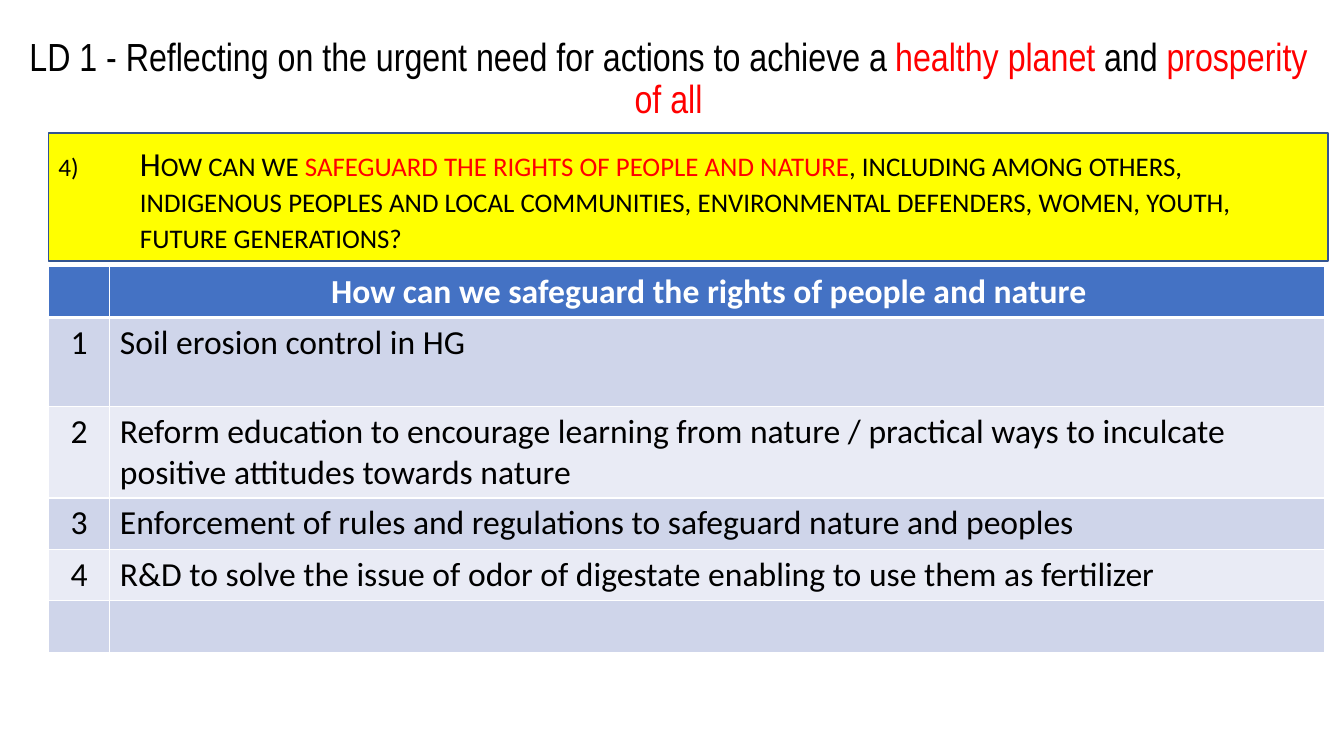
from pptx import Presentation
from pptx import util as u
from pptx.dml.color import RGBColor
from pptx.enum import shapes, text
from pptx.oxml import parse_xml
from pptx.oxml.ns import nsdecls

BLACK, RED, WHITE, YELLOW = "000000", "FF0000", "FFFFFF", "FFFF00"
HEADER, BAND_DARK, BAND_LIGHT = "4472C4", "CFD5EA", "E9EBF5"
OUTLINE = "325491"
LEFT = 0.48


def color(value):
    return RGBColor.from_string(value)


def apply(target, formats):
    for name, value in formats.items():
        setattr(target, name, value)


def element(tag, attributes, content=""):
    return parse_xml(f'<a:{tag} {nsdecls("a")} {attributes}>{content}</a:{tag}>')


class SlideBuilder:
    body_font = "Calibri"
    title_font = "Arial Narrow"

    def __init__(self, slide):
        self.slide = slide

    def place(self, box):
        return [u.Inches(length) for length in box]

    def add_runs(self, paragraph, runs, small_caps=False, **formats):
        for words, run_color in runs:
            run = paragraph.add_run()
            run.text = words
            apply(run.font, formats)
            run.font.color.rgb = color(run_color)
            if small_caps:
                run.font._element.set("cap", "small")

    def rectangle(self, box, fill, line):
        shape = self.slide.shapes.add_shape(shapes.MSO_SHAPE.RECTANGLE, *self.place(box))
        shape.shadow.inherit = False
        shape.fill.solid()
        shape.fill.fore_color.rgb = color(fill)
        shape.line.color.rgb = color(line)
        shape.line.width = u.Pt(1)

    def text_box(self, box, anchor, paragraph_formats):
        frame = self.slide.shapes.add_textbox(*self.place(box)).text_frame
        apply(frame, {"word_wrap": True, "vertical_anchor": anchor})
        paragraph = frame.paragraphs[0]
        apply(paragraph, {"line_spacing": 0.9, **paragraph_formats})
        return paragraph

    def title(self, box, runs):
        paragraph = self.text_box(box, text.MSO_ANCHOR.MIDDLE,
                                  {"alignment": text.PP_ALIGN.CENTER})
        self.add_runs(paragraph, runs, name=self.title_font, size=u.Pt(28))

    def numbered_question(self, box, number, indent, runs):
        paragraph = self.text_box(box, text.MSO_ANCHOR.TOP, {"space_before": u.Pt(10)})
        properties = paragraph._p.get_or_add_pPr()
        properties.set("marL", str(u.Inches(indent)))
        properties.set("indent", str(-u.Inches(indent)))
        for tag, attributes in (("buSzPct", 'val="75000"'),
                                ("buFont", f'typeface="{self.body_font}"'),
                                ("buAutoNum", f'type="arabicParenR" startAt="{number}"')):
            properties.append(element(tag, attributes))
        self.add_runs(paragraph, runs, small_caps=True, name=self.body_font, size=u.Pt(24))

    def borders(self, cell, top, bottom):
        properties = cell._tc.get_or_add_tcPr()
        widths = {"L": 1, "R": 1, "T": top, "B": bottom}
        for index, (side, width) in enumerate(widths.items()):
            properties.insert(index, element(
                f"ln{side}", f'w="{u.Pt(width)}"',
                f'<a:solidFill><a:srgbClr val="{WHITE}"/></a:solidFill>'))

    def table(self, left, top, widths, heights, rows):
        box = self.place((left, top, sum(widths), sum(heights)))
        table = self.slide.shapes.add_table(len(rows), len(widths), *box).table
        for column, width in zip(table.columns, widths):
            column.width = u.Inches(width)
        for row_index, (row, height) in enumerate(zip(rows, heights)):
            table.rows[row_index].height = u.Inches(height)
            is_header = row_index == 0
            fill = HEADER if is_header else (BAND_LIGHT, BAND_DARK)[row_index % 2]
            for column_index, words in enumerate(row):
                cell = table.cell(row_index, column_index)
                cell.fill.solid()
                cell.fill.fore_color.rgb = color(fill)
                self.borders(cell, 3 if row_index == 1 else 1, 3 if is_header else 1)
                paragraph = cell.text_frame.paragraphs[0]
                if is_header or column_index == 0:
                    paragraph.alignment = text.PP_ALIGN.CENTER
                if words:
                    self.add_runs(paragraph, [(words, WHITE if is_header else BLACK)],
                                  name=self.body_font, size=u.Pt(24), bold=is_header)
        table.cell(0, 1).margin_right = u.Inches(0.27)


def main():
    presentation = Presentation()
    apply(presentation, {"slide_width": u.Inches(13.33), "slide_height": u.Inches(7.5)})
    builder = SlideBuilder(presentation.slides.add_slide(presentation.slide_layouts[6]))

    builder.rectangle((LEFT, 1.32, 12.69, 1.27), YELLOW, OUTLINE)
    builder.numbered_question((LEFT, 1.41, 12.49, 5.16), 4, 0.81, [
        ("How can we ", BLACK),
        ("safeguard the rights of people and nature", RED),
        (", including among others, indigenous peoples and local communities, "
         "environmental defenders, women, youth, future generations?", BLACK),
    ])
    builder.title((0.14, 0.33, 12.98, 0.93), [
        ("LD 1 - Reflecting on the urgent need for actions to achieve a ", BLACK),
        ("healthy planet", RED),
        (" and ", BLACK),
        ("prosperity of all", RED),
    ])
    builder.table(LEFT, 2.64, (0.61, 12.05), (0.51, 0.88, 0.91, 0.51, 0.51, 0.51), [
        ("", "How can we safeguard the rights of people and nature"),
        ("1", "Soil erosion control in HG"),
        ("2", "Reform education to encourage learning from nature / practical ways "
              "to inculcate positive attitudes towards nature"),
        ("3", "Enforcement of rules and regulations to safeguard nature and peoples"),
        ("4", "R&D to solve the issue of odor of digestate enabling to use them as fertilizer"),
        ("", ""),
    ])
    presentation.save("out.pptx")


if __name__ == "__main__":
    main()
